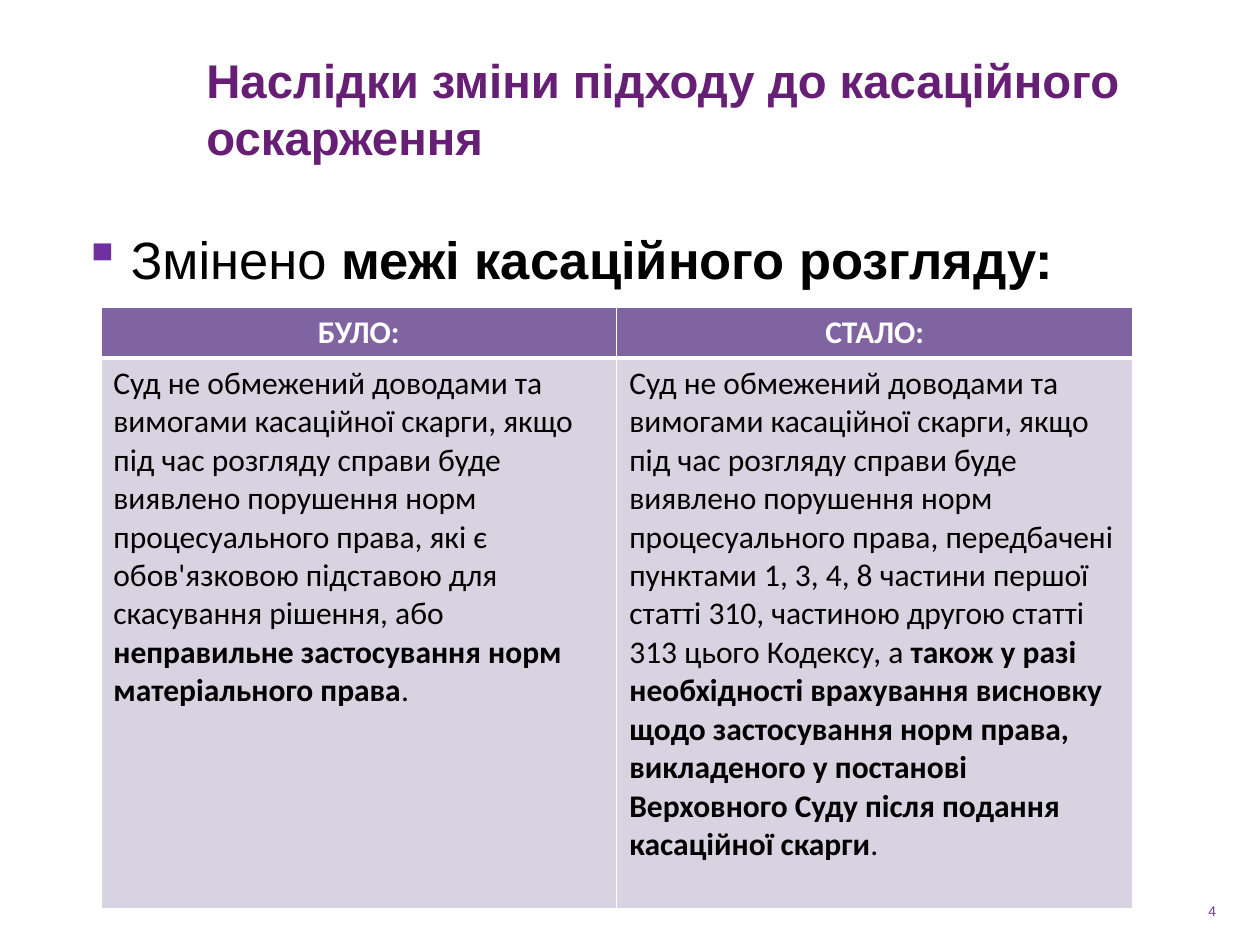
from pptx import Presentation
from pptx.dml.color import RGBColor
from pptx.enum.text import MSO_ANCHOR, PP_ALIGN
from pptx.oxml import parse_xml
from pptx.oxml.ns import nsdecls
from pptx.util import Inches, Pt

TITLE = "Наслідки зміни підходу до касаційного оскарження"
# Each paragraph is a list of (text, bold) spans
LEAD = [("Змінено ", False), ("межі касаційного розгляду:", True)]
HEADERS = ["БУЛО:", "СТАЛО:"]
COMMON = ("Суд не обмежений доводами та вимогами касаційної скарги, якщо під час "
          "розгляду справи буде виявлено порушення норм процесуального права, ")
BODIES = [
    [(COMMON + "які є обов'язковою підставою для скасування рішення, або ", False),
     ("неправильне застосування норм матеріального права", True),
     (".", False)],
    [(COMMON + "передбачені пунктами 1, 3, 4, 8 частини першої статті 310, "
      "частиною другою статті 313 цього Кодексу, а ", False),
     ("також у разі необхідності врахування висновку щодо застосування норм права, "
      "викладеного у постанові Верховного Суду після подання касаційної скарги", True),
     (".", False)],
]
ROW_HEIGHTS = [0.4, 4.37]
TABLE_LEFT, TABLE_TOP, TABLE_WIDTH = 0.8, 2.44, 8.19


def color(value):
    return RGBColor.from_string(value)


def write(para, spans, size, font, fill, align=PP_ALIGN.LEFT):
    para.alignment = align
    for text, bold in spans:
        span = para.add_run()
        span.text = text
        span.font.size = Pt(size)
        span.font.name = font
        span.font.bold = bold
        span.font.color.rgb = color(fill)


def add_text(page, place, anchor=MSO_ANCHOR.TOP):
    """Add a wrapping text box and return its first paragraph."""
    frame = page.shapes.add_textbox(*map(Inches, place)).text_frame
    frame.word_wrap = True
    frame.vertical_anchor = anchor
    return frame.paragraphs[0]


def add_bullet(para, mark, fill, indent):
    props = para._p.get_or_add_pPr()
    props.set("marL", str(Inches(indent)))
    props.set("indent", str(-Inches(indent)))
    props.append(parse_xml(
        f'<a:buClr {nsdecls("a")}><a:srgbClr val="{fill}"/></a:buClr>'))
    props.append(parse_xml(f'<a:buChar {nsdecls("a")} char="{mark}"/>'))


def set_borders(cell, widths):
    """Draw white borders; widths are points for left, right, top, bottom."""
    props = cell._tc.get_or_add_tcPr()
    for index, (side, width) in enumerate(zip("LRTB", widths)):
        props.insert(index, parse_xml(
            f'<a:ln{side} {nsdecls("a")} w="{Pt(width)}"><a:solidFill>'
            f'<a:srgbClr val="FFFFFF"/></a:solidFill></a:ln{side}>'))


def fill_cell(cell, spans, fill, text_color, align, borders):
    cell.fill.solid()
    cell.fill.fore_color.rgb = color(fill)
    write(cell.text_frame.paragraphs[0], spans, 18, "Calibri", text_color, align)
    set_borders(cell, borders)


def add_comparison(page):
    table = page.shapes.add_table(
        2, len(HEADERS), Inches(TABLE_LEFT), Inches(TABLE_TOP),
        Inches(TABLE_WIDTH), Inches(sum(ROW_HEIGHTS))).table
    for row, height in zip(table.rows, ROW_HEIGHTS):
        row.height = Inches(height)
    for index, (header, body) in enumerate(zip(HEADERS, BODIES)):
        table.columns[index].width = Inches(TABLE_WIDTH / len(HEADERS))
        fill_cell(table.cell(0, index), [(header, True)], "8064A2", "FFFFFF",
                  PP_ALIGN.CENTER, (1, 1, 1, 3))
        fill_cell(table.cell(1, index), body, "D8D3E0", "000000",
                  PP_ALIGN.LEFT, (1, 1, 3, 1))


def main():
    deck = Presentation()
    deck.slide_width, deck.slide_height = Inches(10), Inches(7.5)
    page = deck.slides.add_slide(deck.slide_layouts[6])

    lead = add_text(page, (0.56, 1.75, 8.94, 4.95))
    add_bullet(lead, "▪", "7030A0", 0.38)
    write(lead, LEAD, 30, "Arial", "000000")

    title = add_text(page, (1.54, 0.42, 7.96, 0.88), MSO_ANCHOR.MIDDLE)
    write(title, [(TITLE, True)], 27, "Arial", "671E75")

    number = add_text(page, (7.42, 7.15, 2.33, 0.16), MSO_ANCHOR.MIDDLE)
    write(number, [("4", False)], 8, "Arial", "753D89", PP_ALIGN.RIGHT)

    add_comparison(page)
    deck.save("out.pptx")


if __name__ == "__main__":
    main()
